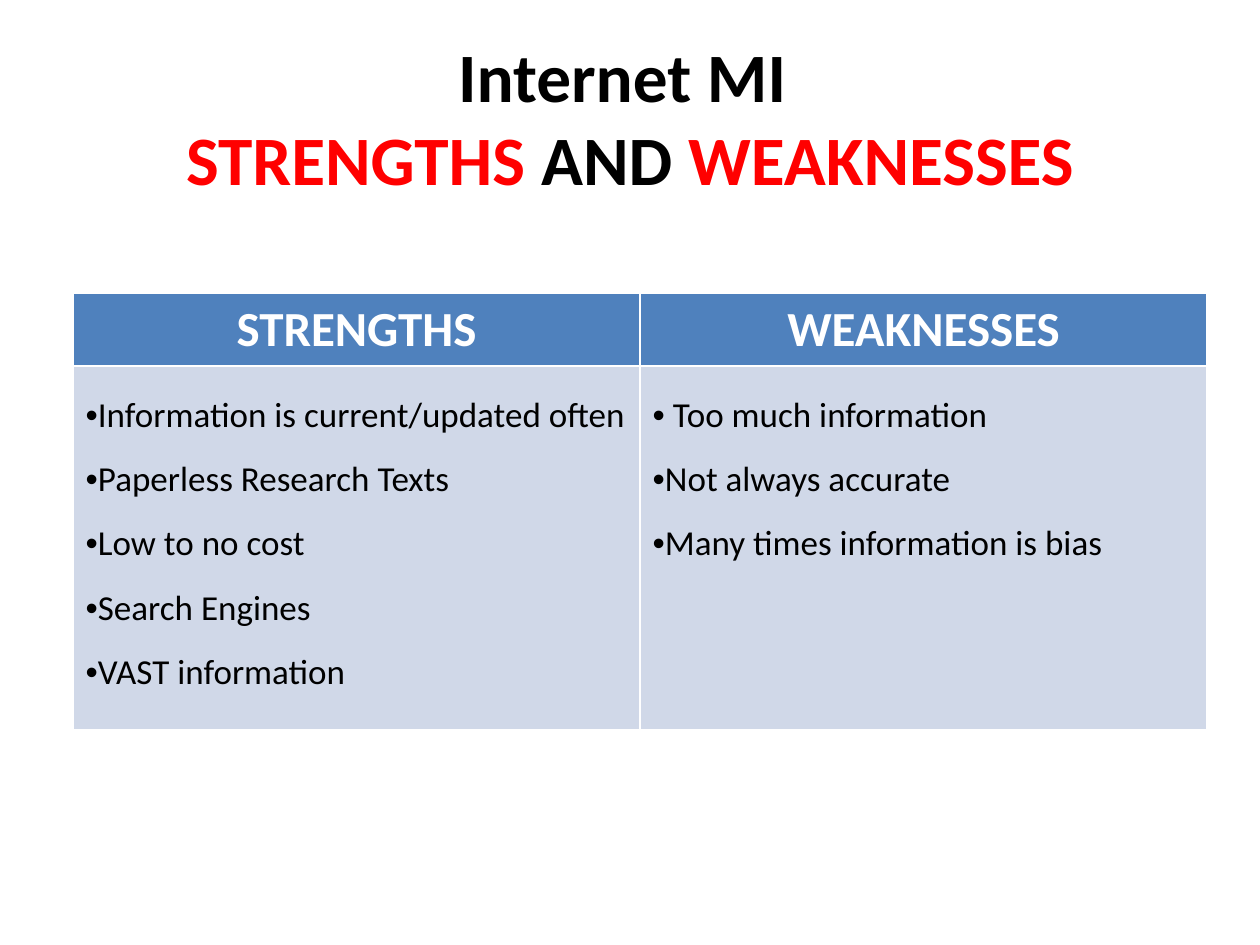
from lxml.etree import SubElement
from pptx import Presentation
from pptx.dml.color import RGBColor
from pptx.enum.text import MSO_ANCHOR, PP_ALIGN
from pptx.oxml.ns import qn
from pptx.util import Inches, Pt

BLACK = RGBColor(0x00, 0x00, 0x00)
WHITE = RGBColor(0xFF, 0xFF, 0xFF)
RED = RGBColor(0xFF, 0x00, 0x00)
BLUE = RGBColor(0x4F, 0x81, 0xBD)
PALE_BLUE = RGBColor(0xD0, 0xD8, 0xE8)
FONT = "Calibri"
BULLET_FONT = "Arial"

COLUMNS = {
    "STRENGTHS": [
        "Information is current/updated often",
        "Paperless Research Texts",
        "Low to no cost",
        "Search Engines",
        "VAST information",
    ],
    "WEAKNESSES": [
        " Too much information",
        "Not always accurate",
        "Many times information is bias",
    ],
}


def add_text(p, text, size=20, color=BLACK, bold=False):
    r = p.add_run()
    r.text = text
    r.font.name = FONT
    r.font.size = Pt(size)
    r.font.bold = bold
    r.font.color.rgb = color


def add_title(s, left, top, width, height):
    sp = s.shapes.title
    sp.left, sp.top, sp.width, sp.height = left, top, width, height
    tf = sp.text_frame
    tf.word_wrap = True
    tf.vertical_anchor = MSO_ANCHOR.MIDDLE
    p = tf.paragraphs[0]
    p.alignment = PP_ALIGN.CENTER
    add_text(p, "Internet MI ", size=39.6, bold=True)
    p.add_line_break()
    for text, color in [("STRENGTHS ", RED), ("AND", BLACK), (" WEAKNESSES", RED)]:
        add_text(p, text, size=39.6, color=color, bold=True)


def fill_cell(cell, color):
    cell.fill.solid()
    cell.fill.fore_color.rgb = color


def add_bullets(tf, items):
    for i, item in enumerate(items):
        p = tf.add_paragraph() if i else tf.paragraphs[0]
        p.line_spacing = 1.5
        pPr = p._p.get_or_add_pPr()
        SubElement(pPr, qn("a:buFont")).set("typeface", BULLET_FONT)
        SubElement(pPr, qn("a:buChar")).set("char", "•")
        add_text(p, item)


def add_comparison(s, left, top, width, height):
    # The default table style supplies the white rules between cells
    frame = s.shapes.add_table(2, len(COLUMNS), left, top, width, height)
    table = frame.table
    header_height = Inches(0.57)
    table.rows[0].height = header_height
    table.rows[1].height = height - header_height
    for col, (heading, items) in enumerate(COLUMNS.items()):
        # Heading
        head = table.cell(0, col)
        fill_cell(head, BLUE)
        p = head.text_frame.paragraphs[0]
        p.alignment = PP_ALIGN.CENTER
        add_text(p, heading, size=28, color=WHITE, bold=True)
        # Points
        body = table.cell(1, col)
        fill_cell(body, PALE_BLUE)
        add_bullets(body.text_frame, items)


def main():
    prs = Presentation()
    prs.slide_width, prs.slide_height = Inches(10), Inches(7.5)
    s = prs.slides.add_slide(prs.slide_layouts[5])
    add_title(s, Inches(0.5), Inches(0.3), Inches(9), Inches(1.25))
    add_comparison(s, Inches(0.58), Inches(2.33), Inches(9), Inches(3.46))
    prs.save("out.pptx")


if __name__ == "__main__":
    main()
